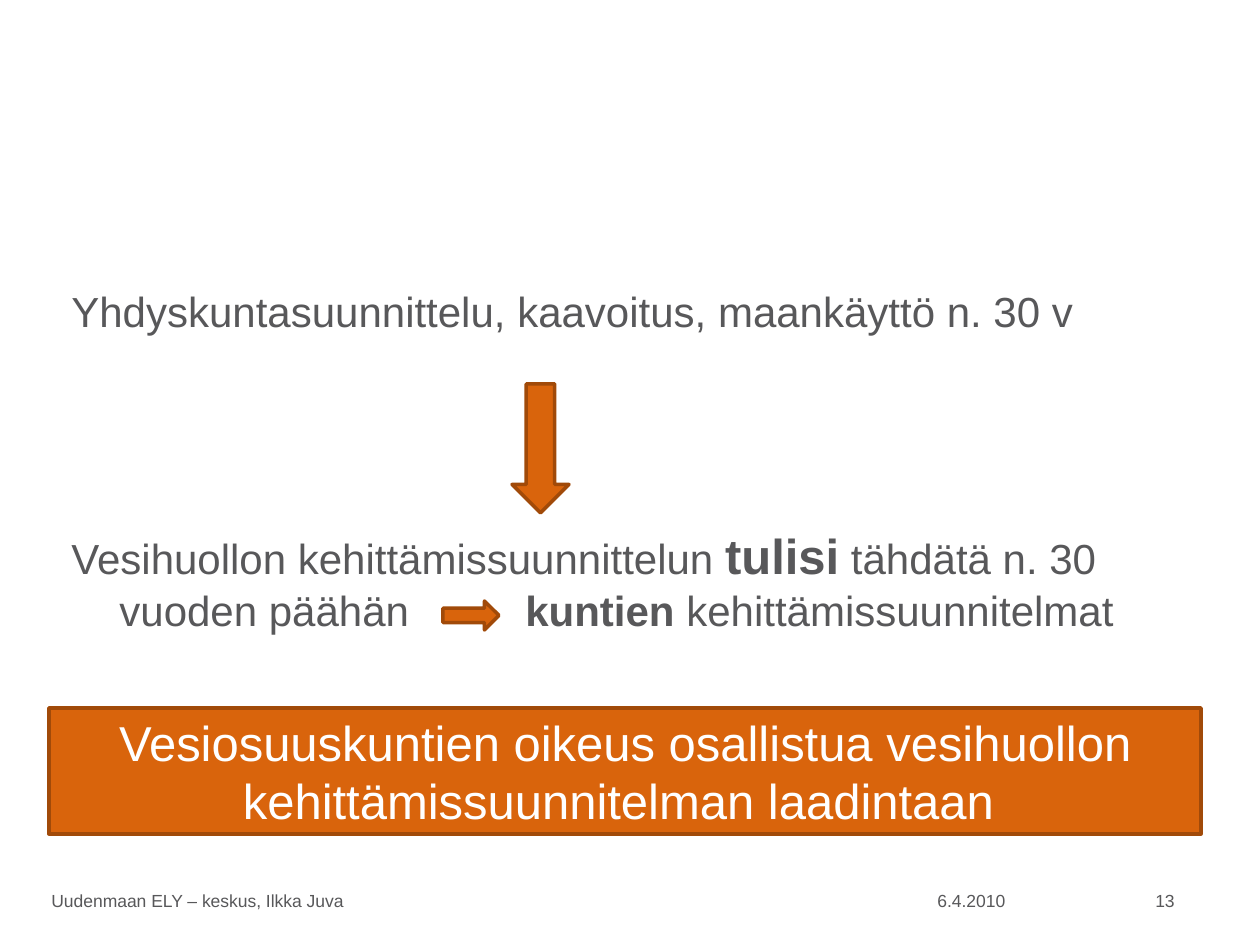
"""Build the slide on planning horizons for water services."""
from pptx import Presentation
from pptx.dml.color import RGBColor
from pptx.enum import shapes, text
from pptx.oxml import parse_xml
from pptx.oxml.ns import nsdecls
from pptx.util import Emu, Pt

PX = 914400 / 126
COLORS = {"text": "58585A", "fill": "D9640C", "line": "A14A09", "white": "FFFFFF"}


def px(*lengths):
    return [Emu(round(length * PX)) for length in lengths]


def style(span, size, color, bold=False):
    span.font.name = "Arial"
    span.font.size = Pt(size)
    span.font.bold = bold
    span.font.color.rgb = RGBColor.from_string(COLORS[color])


deck = Presentation()
deck.slide_width, deck.slide_height = px(1260, 945)
page = deck.slides.add_slide(deck.slide_layouts[6])

body = page.shapes.add_textbox(*px(59, 217, 1142, 659))
frame = body.text_frame
frame.word_wrap = True
frame.margin_top = px(69)[0]
frame.text = "Yhdyskuntasuunnittelu, kaavoitus, maankäyttö n. 30 v"
style(frame.paragraphs[0].runs[0], 24, "text")

goal = frame.add_paragraph()
goal.space_before = Pt(108)
indent, after_arrow = px(48, 454)
goal._p.get_or_add_pPr().append(parse_xml(
    f'<a:tabLst {nsdecls("a")}><a:tab pos="{indent}" algn="l"/>'
    f'<a:tab pos="{after_arrow}" algn="l"/></a:tabLst>'))
goal_lines = [
    [("Vesihuollon kehittämissuunnittelun ", 24, False), ("tulisi", 28, True),
     (" tähdätä n. 30", 24, False)],
    [("\tvuoden päähän\t", 24, False), ("kuntien", 24, True),
     (" kehittämissuunnitelmat", 24, False)],
]
for number, line in enumerate(goal_lines):
    if number:
        goal.add_line_break()
    for wording, size, bold in line:
        span = goal.add_run()
        span.text = wording
        style(span, size, "text", bold)

footers = [
    ("6.4.2010", 925, 186, text.PP_ALIGN.LEFT),
    ("13", 1131, 56, text.PP_ALIGN.RIGHT),
    ("Uudenmaan ELY – keskus, Ilkka Juva", 39, 876, text.PP_ALIGN.LEFT),
]
for wording, left, width, align in footers:
    box = page.shapes.add_textbox(*px(left, 876, width, 50))
    frame = box.text_frame
    frame.word_wrap = True
    frame.vertical_anchor = text.MSO_ANCHOR.MIDDLE
    frame.text = wording
    frame.paragraphs[0].alignment = align
    style(frame.paragraphs[0].runs[0], 10, "text")

kinds = shapes.MSO_SHAPE
blocks = [
    (kinds.DOWN_ARROW, (512, 384, 57, 129), ""),
    (kinds.RIGHT_ARROW, (443, 601, 56, 29), ""),
    (kinds.RECTANGLE, (49, 708, 1152, 126),
     "Vesiosuuskuntien oikeus osallistua vesihuollon kehittämissuunnitelman laadintaan "),
]
for kind, place, wording in blocks:
    block = page.shapes.add_shape(kind, *px(*place))
    block.shadow.inherit = False
    block.fill.solid()
    block.fill.fore_color.rgb = RGBColor.from_string(COLORS["fill"])
    block.line.color.rgb = RGBColor.from_string(COLORS["line"])
    block.line.width = Pt(2)
    if wording:
        frame = block.text_frame
        frame.word_wrap = True
        frame.vertical_anchor = text.MSO_ANCHOR.MIDDLE
        frame.text = wording
        frame.paragraphs[0].alignment = text.PP_ALIGN.CENTER
        style(frame.paragraphs[0].runs[0], 28, "white")

deck.save("out.pptx")
